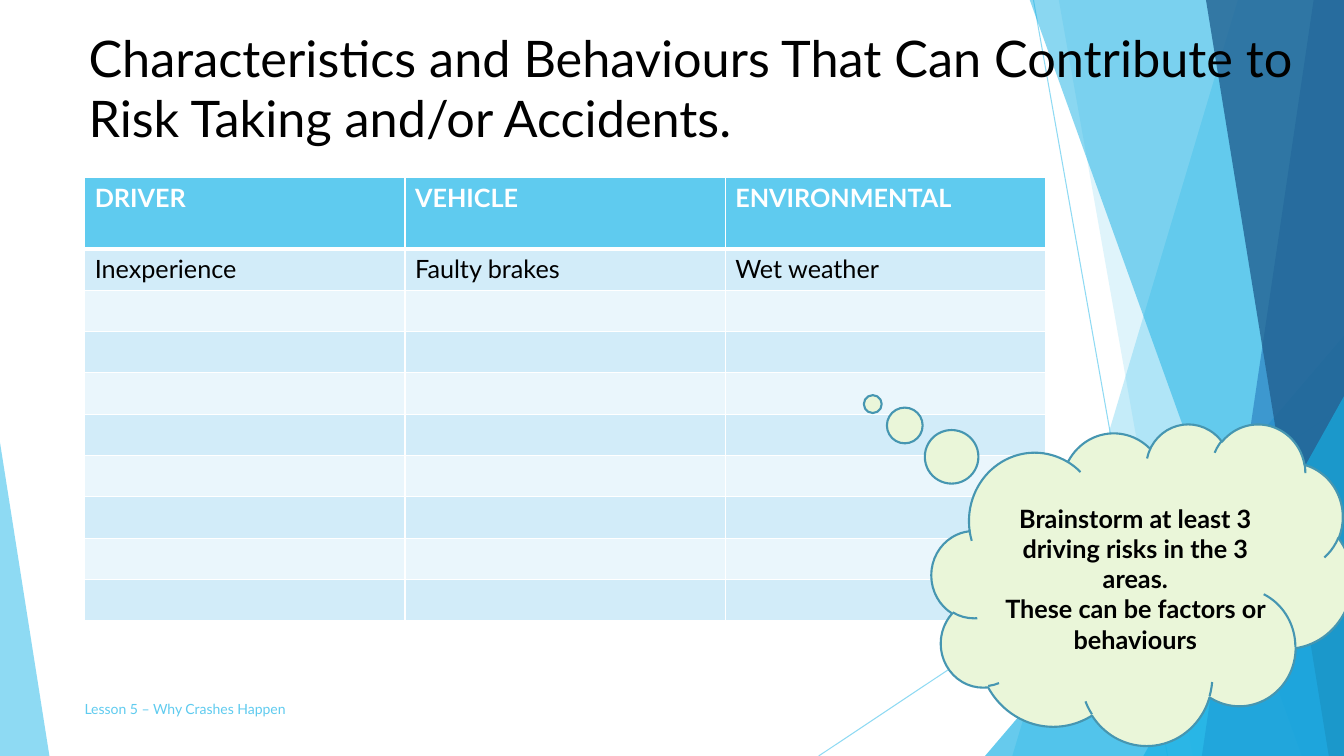
from lxml.etree import SubElement
from pptx import Presentation
from pptx.dml.color import RGBColor as RGB
from pptx.enum.shapes import MSO_CONNECTOR, MSO_SHAPE as SHAPE
from pptx.enum.text import MSO_ANCHOR as ANCHOR, PP_ALIGN as ALIGN
from pptx.oxml.ns import qn
from pptx.util import Inches, Pt

COLORS = {
    "sky": "5FCBEF", "cyan": "17B0E4", "blue": "2E83C3", "navy": "226292",
    "band": "D2ECF9", "pale": "EAF6FC", "cloud": "EAF6D9", "outline": "4696B1",
    "black": "000000", "white": "FFFFFF",
}
FONT = "Lato"
TOP, RIGHT, BOTTOM = -0.01, 13.33, 7.5


def write(tf, text, size=18, color="black", bold=False, align=ALIGN.LEFT):
    for i, line in enumerate(text.split("\n")):
        p = tf.paragraphs[0] if i == 0 else tf.add_paragraph()
        p.alignment = align
        r = p.add_run()
        r.text = line
        r.font.name = FONT
        r.font.size = Pt(size)
        r.font.bold = bold
        r.font.color.rgb = RGB.from_string(COLORS[color])


def set_alpha(fill_parent, percent):
    color = next(fill_parent.iter(qn("a:srgbClr")))
    SubElement(color, qn("a:alpha"), val=str(percent * 1000))


class SlideBuilder:
    def __init__(self, prs):
        self.slide = prs.slides.add_slide(prs.slide_layouts[6])
        self.shapes = self.slide.shapes

    def paint(self, sp, color, alpha=100, line=None, width=1.5):
        sp.shadow.inherit = False
        sp.fill.solid()
        sp.fill.fore_color.rgb = RGB.from_string(COLORS[color])
        if alpha < 100:
            set_alpha(sp._element.spPr, alpha)
        if line:
            sp.line.color.rgb = RGB.from_string(COLORS[line])
            sp.line.width = Pt(width)
        else:
            sp.line.fill.background()

    def line(self, x1, y1, x2, y2, color="sky", alpha=70):
        c = self.shapes.add_connector(
            MSO_CONNECTOR.STRAIGHT, *map(Inches, (x1, y1, x2, y2)))
        c.line.color.rgb = RGB.from_string(COLORS[color])
        c.line.width = Pt(0.75)
        set_alpha(c._element.spPr, alpha)
        SubElement(c._element.spPr, qn("a:effectLst"))

    def shard(self, top_x, bottom_x, color, alpha):
        points = [(RIGHT, TOP), (RIGHT, BOTTOM), (bottom_x, BOTTOM)]
        fb = self.shapes.build_freeform(Inches(top_x), Inches(TOP))
        fb.add_line_segments([(Inches(x), Inches(y)) for x, y in points])
        self.paint(fb.convert_to_shape(), color, alpha)

    def shape(self, kind, box, adjustments, color, **style):
        sp = self.shapes.add_shape(kind, *map(Inches, box))
        for i, value in enumerate(adjustments):
            sp.adjustments[i] = value
        self.paint(sp, color, **style)

    def text(self, box, text, anchor=ANCHOR.TOP, **style):
        tf = self.shapes.add_textbox(*map(Inches, box)).text_frame
        tf.word_wrap = True
        tf.vertical_anchor = anchor
        write(tf, text, **style)

    def cell(self, cell, text, fill, color, bold, bottom):
        tcPr = cell._tc.get_or_add_tcPr()
        for side, width in zip("LRTB", (1, 1, 1, bottom)):
            ln = SubElement(tcPr, qn(f"a:ln{side}"), w=str(Pt(width)))
            solid = SubElement(ln, qn("a:solidFill"))
            SubElement(solid, qn("a:srgbClr"), val=COLORS["white"])
        cell.fill.solid()
        cell.fill.fore_color.rgb = RGB.from_string(COLORS[fill])
        if text:
            write(cell.text_frame, text, color=color, bold=bold)

    def table(self, box, rows, header_height, row_height):
        table = self.shapes.add_table(
            len(rows), len(rows[0]), *map(Inches, box)).table
        for i, row in enumerate(rows):
            header = i == 0
            table.rows[i].height = Inches(header_height if header else row_height)
            fill = "sky" if header else ("pale", "band")[i % 2]
            for j, text in enumerate(row):
                self.cell(table.cell(i, j), text, fill,
                          color="white" if header else "black",
                          bold=header, bottom=3 if header else 1)


def main():
    prs = Presentation()
    prs.slide_width, prs.slide_height = Inches(13.33), Inches(7.5)
    s = SlideBuilder(prs)

    s.line(10.25, 0, 11.58, BOTTOM)
    s.line(RIGHT, 4.03, 8.12, BOTTOM)
    s.shard(12.28, 10.04, "sky", 36)
    s.shard(10.5, 11.83, "sky", 20)
    s.shape(SHAPE.ISOSCELES_TRIANGLE, (9.77, 3.33, 3.56, 4.17), [1], "cyan", alpha=66)
    s.shard(10.21, 12.91, "cyan", 50)
    s.shard(13.03, 11.92, "blue", 70)
    s.shard(11.96, 13.18, "navy", 80)
    s.shape(SHAPE.ISOSCELES_TRIANGLE, (11.34, 3.93, 1.99, 3.57), [1], "cyan", alpha=66)
    s.shape(SHAPE.ISOSCELES_TRIANGLE, (0, 4.39, 0.49, 3.11), [0], "sky", alpha=70)

    s.text((0.78, 0.22, 12.21, 1.6),
           "Characteristics and Behaviours That Can Contribute to "
           "Risk Taking and/or Accidents.", size=36)
    rows = [("DRIVER", "VEHICLE", "ENVIRONMENTAL"),
            ("Inexperience", "Faulty brakes", "Wet weather")]
    rows += [("", "", "")] * 8
    s.table((0.84, 1.76, 9.53, 4.4), rows, header_height=0.71, row_height=0.41)

    s.shape(SHAPE.CLOUD_CALLOUT, (9.24, 4.2, 4.17, 3.19), [-0.64, -0.56],
            "cloud", line="outline")
    s.text((9.8, 4.94, 2.92, 1.62),
           "Brainstorm at least 3 driving risks in the 3 areas.\n"
           "These can be factors or behaviours", bold=True, align=ALIGN.CENTER)
    s.text((0.74, 6.89, 9.4, 0.29), "Lesson 5 – Why Crashes Happen",
           anchor=ANCHOR.MIDDLE, size=10, color="sky")
    prs.save("out.pptx")


if __name__ == "__main__":
    main()
